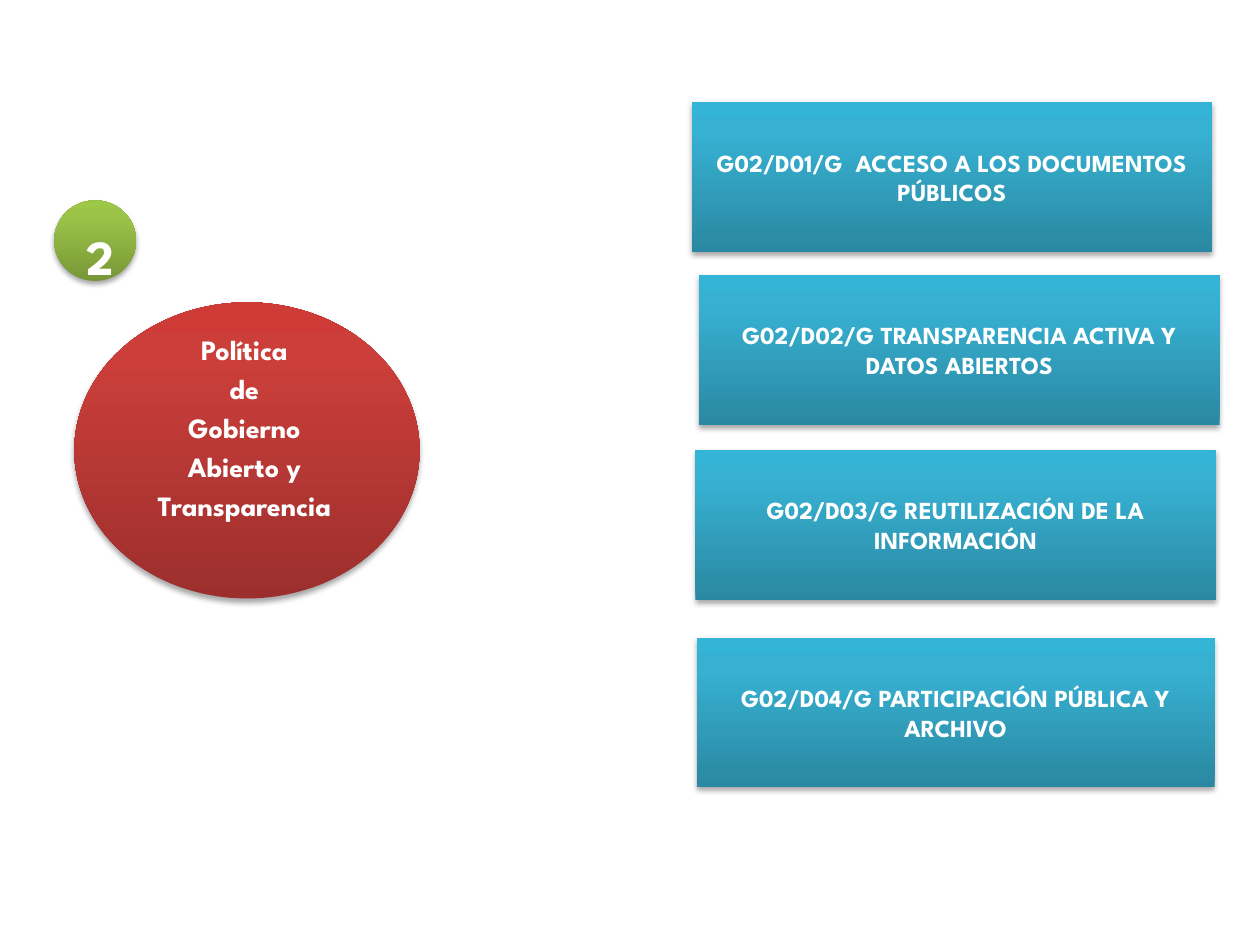
from pptx import Presentation
from pptx.dml.color import RGBColor
from pptx.enum.shapes import MSO_SHAPE
from pptx.enum.text import MSO_ANCHOR, PP_ALIGN
from pptx.oxml import parse_xml
from pptx.oxml.ns import nsdecls
from pptx.util import Inches, Pt

WHITE = RGBColor(0xFF, 0xFF, 0xFF)
BLACK = RGBColor(0x00, 0x00, 0x00)
# Shades run from the bottom edge to the top edge
RED = (RGBColor(0x9C, 0x2F, 0x2D), RGBColor(0xCB, 0x3E, 0x3A), RGBColor(0xCE, 0x3B, 0x37))
BLUE = (RGBColor(0x2A, 0x88, 0xA2), RGBColor(0x37, 0xB1, 0xD2), RGBColor(0x34, 0xB4, 0xD6))
GREEN = (RGBColor(0x77, 0x97, 0x37), RGBColor(0x9B, 0xC3, 0x48), RGBColor(0x9D, 0xC7, 0x46))
STOPS = (0, 80, 100)


class Deck:
    """Holds the text style and the current slide."""

    def __init__(self, slide):
        self.slide = slide
        self.font = {"name": "League Spartan", "bold": True}

    def text(self, frame, lines, size, form):
        frame.word_wrap = True
        for i, line in enumerate(lines):
            para = frame.paragraphs[0] if i == 0 else frame.add_paragraph()
            for key, value in form.items():
                setattr(para, key, value)
            run = para.add_run()
            run.text = line
            for key, value in {**self.font, "size": Pt(size)}.items():
                setattr(run.font, key, value)
            run.font.color.rgb = WHITE

    def shape(self, kind, box, shades):
        item = self.slide.shapes.add_shape(kind, *map(Inches, box))
        item.line.fill.background()
        # Three-stop gradient
        item.fill.gradient()
        item.fill.gradient_angle = 90
        props = item.element.spPr
        stops = props.gradFill.gsLst
        for stop in list(stops):
            stops.remove(stop)
        for pos, shade in zip(STOPS, shades):
            stops.append(parse_xml(
                f'<a:gs {nsdecls("a")} pos="{pos * 1000}">'
                f'<a:srgbClr val="{shade}"/></a:gs>'))
        # Soft shadow below
        item.shadow.inherit = False
        props.effectLst.append(parse_xml(
            f'<a:outerShdw {nsdecls("a")} blurRad="{Pt(3.1)}" dist="{Pt(1.8)}" '
            f'dir="5400000" rotWithShape="0"><a:srgbClr val="{BLACK}">'
            '<a:alpha val="35000"/></a:srgbClr></a:outerShdw>'))
        return item

    def card(self, box, text):
        frame = self.shape(MSO_SHAPE.RECTANGLE, box, BLUE).text_frame
        frame.vertical_anchor = MSO_ANCHOR.MIDDLE
        self.text(frame, [text], 14, {"alignment": PP_ALIGN.CENTER})

    def label(self, box, lines, size, form):
        item = self.slide.shapes.add_textbox(*map(Inches, box))
        self.text(item.text_frame, lines, size, form)


def main():
    prs = Presentation()
    prs.slide_width, prs.slide_height = Inches(10), Inches(7.5)
    deck = Deck(prs.slides.add_slide(prs.slide_layouts[6]))

    # Policy
    deck.shape(MSO_SHAPE.OVAL, (0.59, 2.4, 2.74, 2.35), RED)
    deck.label((0.74, 2.62, 2.4, 1.64),
               ["Política", "de", "Gobierno", "Abierto y", "Transparencia"], 16,
               {"alignment": PP_ALIGN.CENTER, "line_spacing": 0.9, "space_after": Pt(5)})

    # Guidelines
    cards = [
        (5.49, 0.81, 4.13, "G02/D01/G  ACCESO A LOS DOCUMENTOS PÚBLICOS"),
        (5.55, 2.18, 4.13, "G02/D02/G TRANSPARENCIA ACTIVA Y DATOS ABIERTOS"),
        (5.52, 3.57, 4.13, "G02/D03/G REUTILIZACIÓN DE LA INFORMACIÓN"),
        (5.53, 5.06, 4.11, "G02/D04/G PARTICIPACIÓN PÚBLICA Y ARCHIVO"),
    ]
    for left, top, width, text in cards:
        deck.card((left, top, width, 1.19), text)

    # Number badge
    deck.shape(MSO_SHAPE.OVAL, (0.43, 1.59, 0.65, 0.64), GREEN)
    deck.label((0.59, 1.75, 0.3, 0.57), ["2"], 28, {"alignment": PP_ALIGN.LEFT})

    prs.save("out.pptx")


if __name__ == "__main__":
    main()
